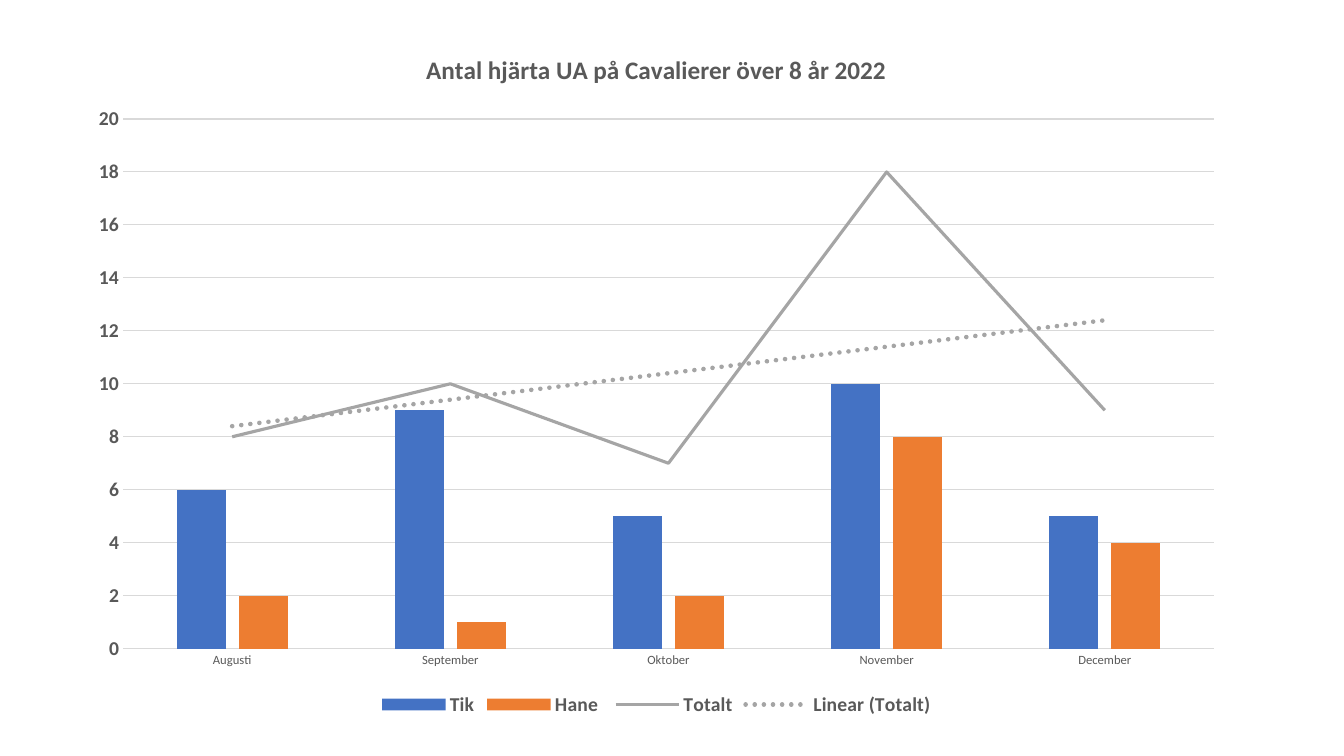
import lxml.etree
import pptx
import pptx.chart.data
import pptx.dml.color
import pptx.enum.chart
import pptx.oxml
import pptx.oxml.ns
import pptx.util

# Content
TITLE = "Antal hjärta UA på Cavalierer över 8 år 2022"
MONTHS = ["Augusti", "September", "Oktober", "November", "December"]
COUNTS = {
    "Tik": [6, 9, 5, 10, 5],
    "Hane ": [2, 1, 2, 8, 4],
    "Totalt": [8, 10, 7, 18, 9],
}
COLORS = {
    "Tik": "4472C4",
    "Hane ": "ED7D31",
    "Totalt": "A5A5A5",
    "text": "595959",
    "grid": "D9D9D9",
}
FONT = "Calibri"
CHART_BOX = (0.75, 0.28, 11.52, 6.87)

Inches, Pt = pptx.util.Inches, pptx.util.Pt
qn = pptx.oxml.ns.qn
NAMESPACES = pptx.oxml.ns.nsdecls("c", "a")


def color(name):
    return pptx.dml.color.RGBColor.from_string(COLORS[name])


def style_font(font, size, bold):
    font.name, font.size, font.bold = FONT, Pt(size), bold
    font.color.rgb = color("text")


def style_line(line, name, width):
    line.color.rgb = color(name)
    line.width = Pt(width)


def move_total_to_line(chart):
    """Put the last series in a line plot that shares the column axes."""
    bar_chart = chart._chartSpace.find(".//" + qn("c:barChart"))
    total = bar_chart.findall(qn("c:ser"))[-1]
    for bar_setting in total.findall(qn("c:invertIfNegative")):
        total.remove(bar_setting)
    line_chart = pptx.oxml.parse_xml(
        f'<c:lineChart {NAMESPACES}><c:grouping val="standard"/>'
        '<c:varyColors val="0"/><c:marker val="1"/></c:lineChart>')
    line_chart.insert(2, total)
    for axis_id in bar_chart.findall(qn("c:axId")):
        lxml.etree.SubElement(line_chart, qn("c:axId")).set("val", axis_id.get("val"))
    bar_chart.addnext(line_chart)

    trend = pptx.oxml.parse_xml(
        f'<c:trendline {NAMESPACES}><c:name>Linear (Totalt)</c:name>'
        f'<c:spPr><a:ln w="{Pt(3.25)}" cap="rnd"><a:solidFill>'
        f'<a:srgbClr val="{COLORS["Totalt"]}"/></a:solidFill>'
        '<a:prstDash val="sysDot"/></a:ln></c:spPr>'
        '<c:trendlineType val="linear"/><c:dispRSqr val="0"/>'
        '<c:dispEq val="0"/></c:trendline>')
    total.find(qn("c:cat")).addprevious(trend)


deck = pptx.Presentation()
deck.slide_width, deck.slide_height = Inches(13.33), Inches(7.5)
slide = deck.slides.add_slide(deck.slide_layouts[6])

# Chart
data = pptx.chart.data.CategoryChartData()
data.categories = MONTHS
for name, values in COUNTS.items():
    data.add_series(name, values)
chart = slide.shapes.add_chart(
    pptx.enum.chart.XL_CHART_TYPE.COLUMN_CLUSTERED,
    *map(Inches, CHART_BOX), data).chart
chart.font.name, chart.font.size = FONT, Pt(10)
move_total_to_line(chart)

# Columns and total line
columns, lines = chart.plots
columns.gap_width, columns.overlap = 219, -27
columns.vary_by_categories = False
for series in columns.series:
    series.format.fill.solid()
    series.format.fill.fore_color.rgb = color(series.name)
total = lines.series[0]
total.smooth = False
total.marker.style = pptx.enum.chart.XL_MARKER_STYLE.NONE
style_line(total.format.line, "Totalt", 2.25)

# Title
title = chart.chart_title.text_frame
title.text = TITLE
style_font(title.paragraphs[0].runs[0].font, 18, True)

# Axes
months, counts = chart.category_axis, chart.value_axis
for axis, size, bold in ((months, 9, False), (counts, 14, True)):
    axis.major_tick_mark = axis.minor_tick_mark = pptx.enum.chart.XL_TICK_MARK.NONE
    style_font(axis.tick_labels.font, size, bold)
style_line(months.format.line, "grid", 0.75)
counts.format.line.fill.background()
counts.minimum_scale, counts.maximum_scale, counts.major_unit = 0, 20, 2
style_line(counts.major_gridlines.format.line, "grid", 0.75)

# Legend
chart.has_legend = True
chart.legend.position = pptx.enum.chart.XL_LEGEND_POSITION.BOTTOM
chart.legend.include_in_layout = False
style_font(chart.legend.font, 14, True)

deck.save("out.pptx")
